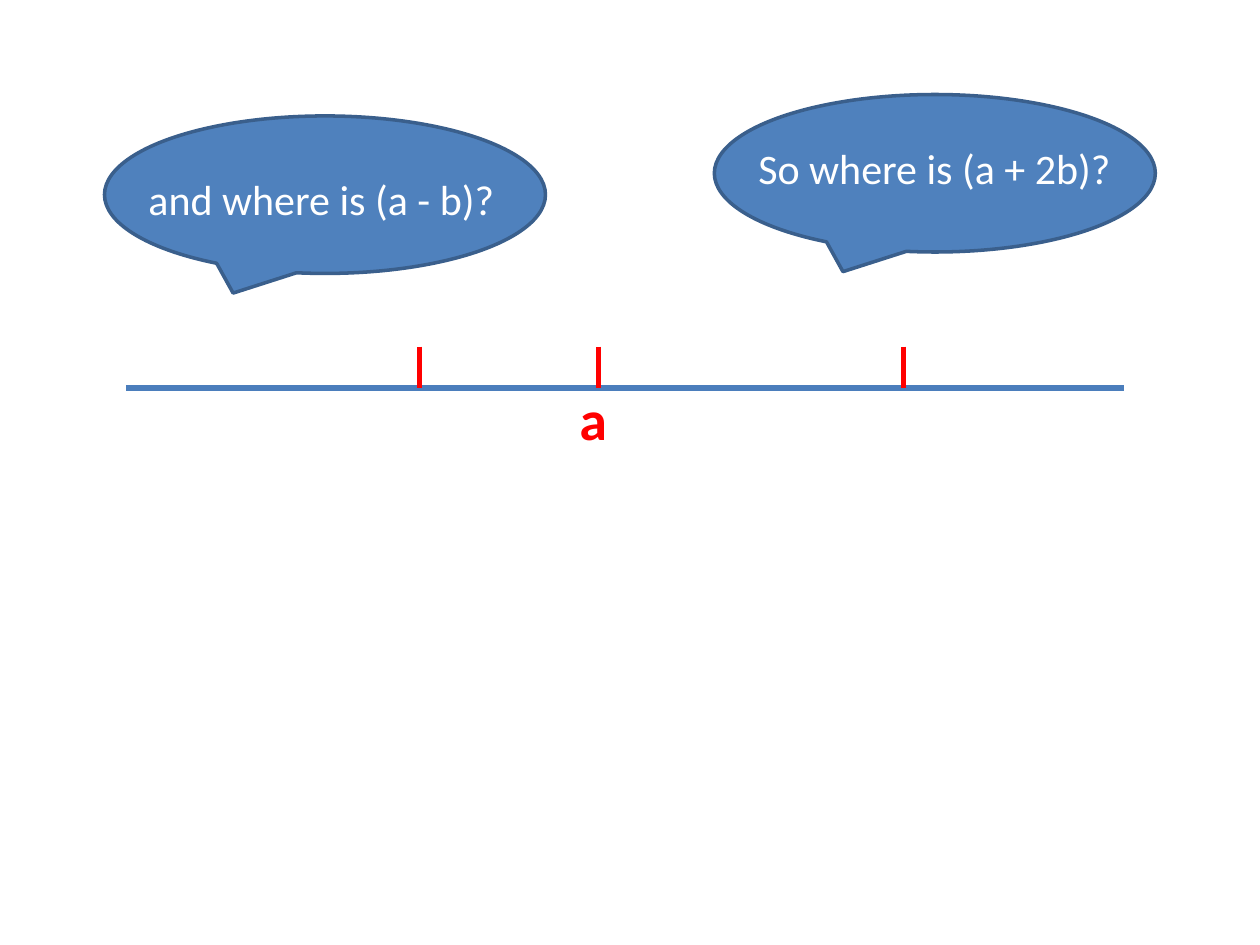
from pptx import Presentation
from pptx.dml.color import RGBColor
from pptx.enum.shapes import MSO_CONNECTOR, MSO_SHAPE
from pptx.enum.text import MSO_AUTO_SIZE
from pptx.oxml.ns import qn
from pptx.util import Inches, Pt
from lxml.etree import SubElement

COLORS = {"bubble": "4F81BD", "outline": "3A5F8C", "axis": "4B7EBC", "mark": "FF0000", "speech": "FFFFFF"}
SPEECH_FORMAT = {"name": "Calibri", "size": Pt(24)}
LABEL_FORMAT = {"name": "Calibri", "size": Pt(32), "bold": True}


def color(name):
    """Return the named colour."""
    return RGBColor.from_string(COLORS[name])


def add_line(slide, start, end, color_name):
    """Draw a straight line without a shadow."""
    points = [Inches(value) for value in (*start, *end)]
    line = slide.shapes.add_connector(MSO_CONNECTOR.STRAIGHT, *points)
    line.line.color.rgb = color(color_name)
    line.line.width = Pt(3)
    SubElement(line._element.spPr, qn("a:effectLst"))


def add_text(slide, box, text, color_name, font_format):
    """Write one paragraph in a wrapping text box."""
    frame = slide.shapes.add_textbox(*[Inches(value) for value in box]).text_frame
    frame.word_wrap = True
    frame.auto_size = MSO_AUTO_SIZE.SHAPE_TO_FIT_TEXT
    frame.text = text
    font = frame.paragraphs[0].runs[0].font
    for name, value in font_format.items():
        setattr(font, name, value)
    font.color.rgb = color(color_name)


def add_bubble(slide, box, text, text_top, text_width):
    """Place a speech bubble and its question inside the box."""
    left, top, width, height = box
    bubble = slide.shapes.add_shape(MSO_SHAPE.OVAL_CALLOUT, *[Inches(value) for value in box])
    bubble.shadow.inherit = False
    bubble.fill.solid()
    bubble.fill.fore_color.rgb = color("bubble")
    bubble.line.color.rgb = color("outline")
    bubble.line.width = Pt(2)
    text_box = (left + 0.25, top + text_top, text_width, 0.4 * height)
    add_text(slide, text_box, text, "speech", SPEECH_FORMAT)


def add_number_line(slide, box, marks, label_mark):
    """Draw the axis along the bottom of the box, its marks and the label a."""
    left, top, width, height = box
    bottom = top + height
    add_line(slide, (left, bottom), (left + width, bottom), "axis")
    for mark in marks:
        add_line(slide, (mark, top), (mark, bottom), "mark")
    add_text(slide, (label_mark - 0.25, top + 0.25, 0.75, 0.64), "a", "mark", LABEL_FORMAT)


def main():
    """Build and save the slide."""
    presentation = Presentation()
    presentation.slide_width = Inches(10)
    presentation.slide_height = Inches(7.5)
    slide = presentation.slides.add_slide(presentation.slide_layouts[6])
    add_number_line(slide, (1, 2.75, 7.92, 0.33), (3.33, 4.75, 7.17), 4.75)
    add_bubble(slide, (5.67, 0.75, 3.5, 1.25), "So where is (a + 2b)?", 0.33, 3)
    add_bubble(slide, (0.83, 0.92, 3.5, 1.25), "and where is (a - b)?", 0.41, 3.25)
    presentation.save("out.pptx")


if __name__ == "__main__":
    main()
